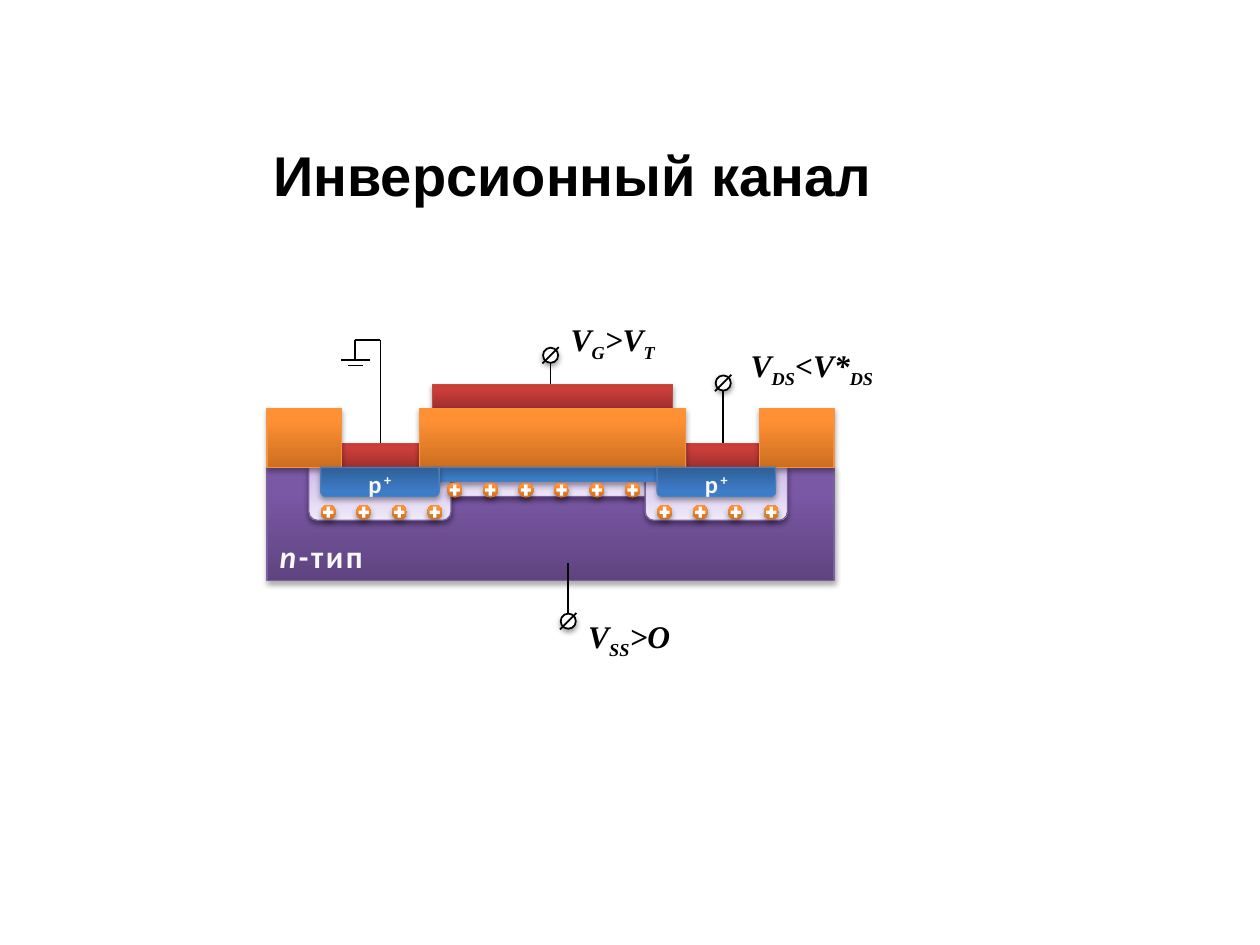
import pptx
import pptx.util
import pptx.dml.color
import pptx.enum.shapes
import pptx.enum.text
import pptx.oxml
import pptx.oxml.ns

KINDS = pptx.enum.shapes.MSO_SHAPE
COLUMNS = 100
PURPLE = (("5F4480", "7B58A6", "7C57A8"), 80, "7D60A0")
LILAC = (("C9B5E8", "D8CBEE", "F0EAF9"), 35, "7D60A0")
RED = (("9C2F2D", "CB3E3A", "CE3B37"), 80, "BF4C48")
ORANGE = (("CC6E20", "FF9034", "FF9136"), 80, "F69240")
BLUE = (("2F5F99", "3D7CC7", "3A7CCB"), 80, "4B7EBC")

presentation = pptx.Presentation()
presentation.slide_width = pptx.util.Inches(10)
presentation.slide_height = pptx.util.Inches(7.5)


def rgb(code):
    """Turn a hex string into a colour."""
    return pptx.dml.color.RGBColor.from_string(code)


def cells(*lengths):
    """Turn grid cells into slide lengths."""
    return [round(n * presentation.slide_width / COLUMNS) for n in lengths]


def drop_shadow(shape, alpha, distance):
    """Give a shape a soft shadow falling straight down."""
    shape.shadow.inherit = False
    effects = shape._element.spPr.find(pptx.oxml.ns.qn("a:effectLst"))
    effects.append(pptx.oxml.parse_xml(
        f'<a:outerShdw {pptx.oxml.ns.nsdecls("a")} blurRad="{pptx.util.Pt(3.1)}" '
        f'dist="{pptx.util.Pt(distance)}" dir="5400000" rotWithShape="0">'
        f'<a:srgbClr val="000000"><a:alpha val="{alpha}000"/></a:srgbClr></a:outerShdw>'))


def shade(shape, stops, middle):
    """Fill a shape with a three-stop gradient running upwards."""
    shape.fill.gradient()
    shape.fill.gradient_angle = 90
    stop_list = shape._element.spPr.find(".//" + pptx.oxml.ns.qn("a:gsLst"))
    for stop in list(stop_list):
        stop_list.remove(stop)
    for position, code in zip((0, middle, 100), stops):
        stop_list.append(pptx.oxml.parse_xml(
            f'<a:gs {pptx.oxml.ns.nsdecls("a")} pos="{position}000">'
            f'<a:srgbClr val="{code}"/></a:gs>'))


def layer(slide, box, material, kind=KINDS.RECTANGLE, outlined=True):
    """Draw one shaded layer, with rounded ones turned to face down."""
    stops, middle, edge = material
    region = slide.shapes.add_shape(kind, *cells(*box))
    shade(region, stops, middle)
    if outlined:
        region.line.color.rgb = rgb(edge)
        region.line.width = pptx.util.Pt(0.75)
    else:
        region.line.fill.background()
    if kind == KINDS.ROUND_2_SAME_RECTANGLE:
        region.rotation = 180
    drop_shadow(region, *((38, 1.6) if material is LILAC else (35, 1.8)))


def wire(slide, *ends):
    """Draw a thin black line between two points."""
    line = slide.shapes.add_connector(pptx.enum.shapes.MSO_CONNECTOR.STRAIGHT, *cells(*ends))
    line.line.color.rgb = rgb("000000")
    line.line.width = pptx.util.Pt(1)
    line._element.spPr.append(pptx.oxml.parse_xml(
        f'<a:effectLst {pptx.oxml.ns.nsdecls("a")}/>'))


def label(slide, box, parts, size, font, color="000000", italics=(), spacing=0,
          centred=False, wrap=True):
    """Write bold text from (wording, baseline) parts."""
    frame = slide.shapes.add_textbox(*cells(*box)).text_frame
    frame.word_wrap = wrap
    paragraph = frame.paragraphs[0]
    if centred:
        paragraph.alignment = pptx.enum.text.PP_ALIGN.CENTER
    for wording, baseline in parts:
        run = paragraph.add_run()
        run.text = wording
        run.font.size = pptx.util.Pt(size)
        run.font.name = font
        run.font.bold = True
        run.font.italic = wording in italics
        run.font.color.rgb = rgb(color)
        properties = run._r.get_or_add_rPr()
        if baseline:
            properties.set("baseline", str(baseline * 1000))
        if spacing:
            properties.set("spc", str(spacing))


def holes(slide, left, top, count):
    """Place a row of positive carriers at an even pitch."""
    for index in range(count):
        x = left + 2.82 * index
        layer(slide, (x, top, 1.2, 1.2), ORANGE, KINDS.OVAL, outlined=False)
        plus = slide.shapes.add_shape(KINDS.MATH_PLUS, *cells(x + 0.05, top, 1.1, 1.2))
        plus.fill.solid()
        plus.fill.fore_color.rgb = rgb("FFFFFF")
        plus.line.fill.background()
        plus.shadow.inherit = False


def terminal(slide, box, wire_end, caption_offset, caption):
    """Draw a crossed circle on its wire, with the voltage beside it."""
    left, top, width, height = box
    middle = left + width / 2
    wire(slide, middle, top + height / 2, middle, wire_end)
    ring = slide.shapes.add_shape(KINDS.OVAL, *cells(*box))
    ring.fill.solid()
    ring.fill.fore_color.rgb = rgb("FFFFFF")
    ring.line.color.rgb = rgb("000000")
    ring.line.width = pptx.util.Pt(1)
    drop_shadow(ring, 38, 1.6)
    wire(slide, left - 0.05, top + height + 0.05, left + width + 0.05, top - 0.05)
    across, down = caption_offset
    label(slide, (left + across, top + down, 12, 4), caption, 18, "Times New Roman",
          italics=[wording for wording, _ in caption])


def ground(slide, box):
    """Draw the grounded source wire."""
    left, top, width, height = box
    stem, right = left + 1.1, left + width
    wire(slide, right, top, right, top + height)
    wire(slide, right, top, stem, top)
    wire(slide, stem, top, stem, top + 1.55)
    wire(slide, left, top + 1.6, left + 2.3, top + 1.6)
    wire(slide, left + 0.5, top + 2, left + 1.7, top + 2)


def doped_region(slide, box):
    """Draw a p+ region with its label and the holes below."""
    left, top, width, height = box
    layer(slide, box, BLUE, KINDS.ROUND_2_SAME_RECTANGLE)
    label(slide, (left + 1.55, top - 0.4, 6.3, 3.4), (("p", 0), ("+", 30)), 14, "Calibri",
          "F8F8F8", spacing=150, centred=True)
    holes(slide, left, top + 2.95, 4)


def transistor(slide, box):
    """Stack the layers of the transistor from substrate to gate."""
    left, top, width, height = box
    surface = top + 6.6
    rounded = KINDS.ROUND_2_SAME_RECTANGLE
    wells = (left + 3.3, left + 30)
    layer(slide, (left, surface, width, height - 6.6), PURPLE)
    layer(slide, (left + 10.2, surface + 0.4, 23, 1.9), LILAC, rounded)
    for well in wells:
        layer(slide, (well, surface, 11.3, 4.2), LILAC, rounded)
    for across, down, span in ((5.9, 4.7, 6.3), (33.3, 4.7, 5.9), (13.1, 0, 19.1)):
        layer(slide, (left + across, top + down, span, 2), RED)
    for across, span in ((0, 5.9), (39.1, 5.9), (12.1, 21.1)):
        layer(slide, (left + across, top + 1.9, span, 4.7), ORANGE)
    layer(slide, (left + 13.1, surface, 19.1, 1.1), BLUE, rounded)
    label(slide, (left, top + 11.6, 14.9, 4), (("n", 0), ("-тип", 0)), 18, "Calibri",
          "F8F8F8", italics=("n",), spacing=150)
    for well in wells:
        doped_region(slide, (well + 0.95, surface, 9.4, 2.3))
    holes(slide, left + 14.3, surface + 1.2, 6)


def inversion_channel_slide():
    """Build the slide on the inversion channel."""
    slide = presentation.slides.add_slide(presentation.slide_layouts[6])
    transistor(slide, (21.2, 30.5, 45, 15.6))
    ground(slide, (27.1, 27, 3.1, 8.2))
    terminal(slide, (43.1, 27.6, 1.2, 1.2), 30.5, (1.2, -2.7),
             (("V", 0), ("G", -25), (">V", 0), ("T", -25)))
    terminal(slide, (56.8, 29.8, 1.2, 1.2), 35.2, (1.8, -2.8),
             (("V", 0), ("DS", -25), ("<V*", 0), ("DS", -25)))
    terminal(slide, (44.5, 48.7, 1.2, 1.2), 44.7, (1.2, -0.2),
             (("V", 0), ("SS", -25), (">O", 0)))
    label(slide, (20.7, 10.7, 49.9, 6.4), (("Инверсионный канал", 0),), 32, "Arial", wrap=False)


inversion_channel_slide()
presentation.save("out.pptx")
